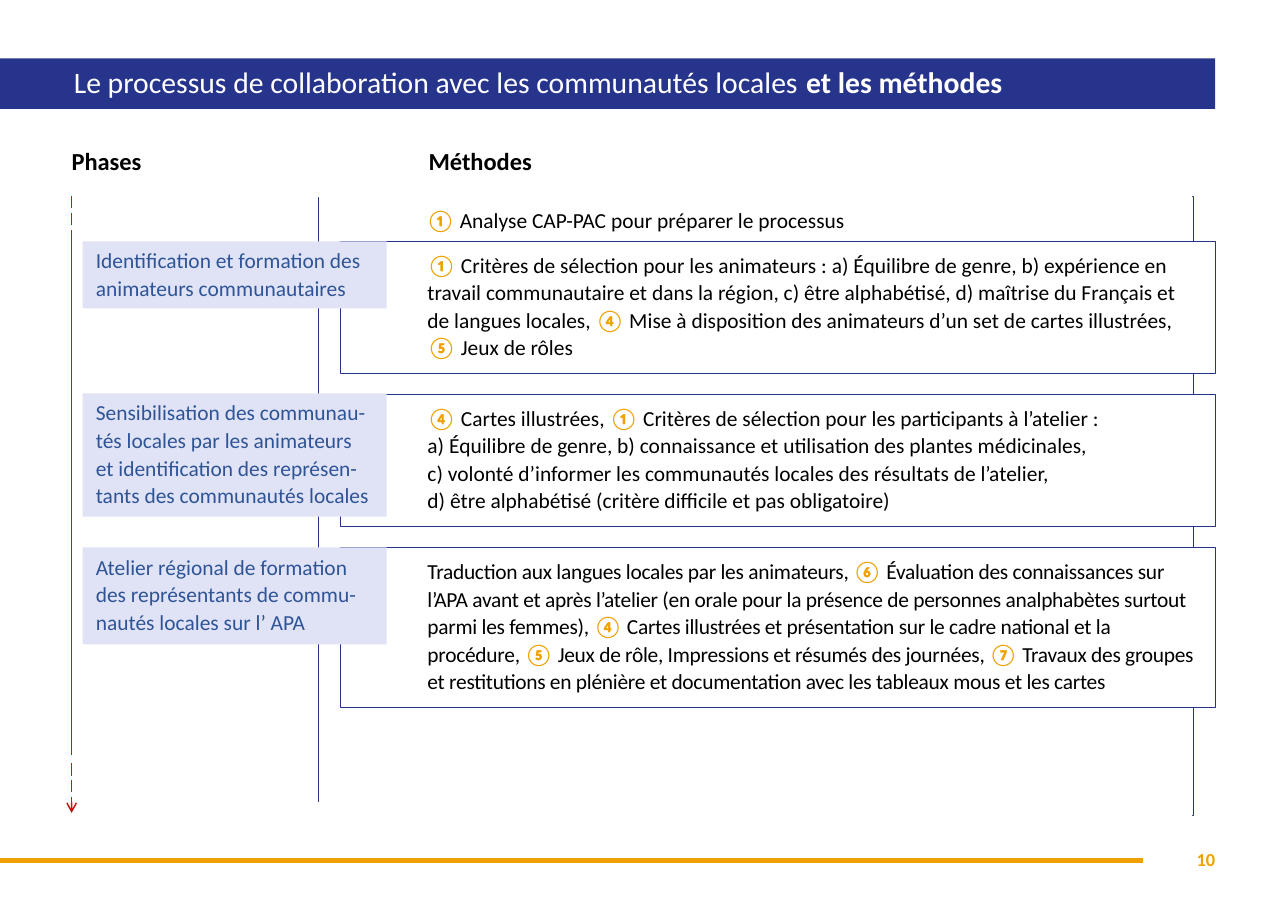
"""Build the slide on the collaboration process with local communities and its methods."""
from lxml import etree
from pptx import Presentation
from pptx.dml.color import RGBColor
from pptx.enum import dml, shapes, text
from pptx.oxml.ns import qn
from pptx.util import Inches, Pt

COLORS = {"navy": "27348B", "gold": "EEA100", "red": "CD1316", "pale": "E0E3F6",
          "label": "2F5496", "black": "000000", "white": "FFFFFF"}
FONT = "Calibri"
MARKERS = "①④⑤⑥⑦"

TITLE = [("Le processus de collaboration avec les communautés locales ", False),
         ("et les méthodes", True)]
HEADINGS = ["Phases", "Méthodes"]
PREPARATION = ["① ", "Analyse CAP-PAC pour préparer le processus"]
PAGE_NUMBER = "10"
PHASES = [
    {"label": "Identification et formation des animateurs communautaires",
     "label_top": 2.19, "label_height": 0.61, "top": 2.19, "height": 1.2, "spacing": 0,
     "methods": [
         "① ", "Critères de sélection pour les animateurs : a) Équilibre de genre, "
         "b) expérience en travail communautaire et dans la région, c) être alphabétisé, "
         "d) maîtrise du Français et de langues locales, ",
         "④", " Mise à disposition des animateurs d’un set de cartes illustrées, ",
         "⑤", " Jeux de rôles"]},
    {"label": "Sensibilisation des communau-tés locales par les animateurs "
              "et identification des représen-tants des communautés locales",
     "label_top": 3.57, "label_height": 1.12, "top": 3.58, "height": 1.2, "spacing": 0,
     "methods": [
         "④", " Cartes illustrées, ",
         "①", " Critères de sélection pour les participants à l’atelier : \n"
         "a) Équilibre de genre, b) connaissance et utilisation des plantes médicinales, \n"
         "c) volonté d’informer les communautés locales des résultats de l’atelier, \n"
         "d) être alphabétisé (critère difficile et pas obligatoire)"]},
    {"label": "Atelier régional de formation des représentants de commu-nautés locales "
              "sur l’ APA",
     "label_top": 4.97, "label_height": 0.88, "top": 4.97, "height": 1.45, "spacing": -0.2,
     "methods": [
         "Traduction aux langues locales par les animateurs, ",
         "⑥ ", "Évaluation des connaissances sur l’APA avant et après l’atelier (en orale "
         "pour la présence de personnes analphabètes surtout parmi les femmes), ",
         "④ ", "Cartes illustrées et présentation sur le cadre national et la procédure, ",
         "⑤", " Jeux de rôle, Impressions et résumés des journées, ",
         "⑦ ", "Travaux des groupes \net restitutions en plénière et documentation "
         "avec les tableaux mous et les cartes"]},
]
TIMELINE_X = 0.65
TIMELINE = [(1.78, 2.05, True, False), (2.09, 6.85, False, False), (6.93, 7.38, True, True)]


def color(name):
    return RGBColor.from_string(COLORS[name])


def place(shape, left, top, width, height):
    shape.left, shape.top = Inches(left), Inches(top)
    shape.width, shape.height = Inches(width), Inches(height)


def set_frame(shape, insets, anchor=text.MSO_ANCHOR.TOP):
    frame = shape.text_frame
    frame.auto_size = text.MSO_AUTO_SIZE.NONE
    frame.word_wrap = True
    frame.vertical_anchor = anchor
    (frame.margin_left, frame.margin_top,
     frame.margin_right, frame.margin_bottom) = map(Inches, insets)
    paragraph = frame.paragraphs[0]
    paragraph.alignment = text.PP_ALIGN.LEFT
    paragraph.space_before = Pt(0)
    return paragraph


def add_run(paragraph, content, size, color_name, bold=False, spacing=0):
    for index, line in enumerate(content.split("\n")):
        if index:
            paragraph.add_line_break()
        run = paragraph.add_run()
        run.text = line
        run.font.name, run.font.size, run.font.bold = FONT, Pt(size), bold
        run.font.color.rgb = color(color_name)
        if spacing:
            run._r.get_or_add_rPr().set("spc", str(round(spacing * 100)))


def add_methods(shape, runs, insets, spacing=0):
    paragraph = set_frame(shape, insets)
    paragraph.line_spacing, paragraph.space_after = Pt(18), Pt(6)
    for content in runs:
        marked = content[0] in MARKERS
        add_run(paragraph, content, 14, "gold" if marked else "black", marked, spacing)


def add_box(slide, left, top, width, height, fill, line_width=0):
    shape = slide.shapes.add_shape(shapes.MSO_SHAPE.RECTANGLE, 0, 0, 0, 0)
    place(shape, left, top, width, height)
    shape.shadow.inherit = False
    shape.fill.solid()
    shape.fill.fore_color.rgb = color(fill)
    if line_width:
        shape.line.color.rgb = color("navy")
        shape.line.width = Pt(line_width)
    else:
        shape.line.fill.background()
    return shape


def add_line(slide, start, end, color_name, width, dashed=False, arrow=False):
    line = slide.shapes.add_connector(shapes.MSO_CONNECTOR.STRAIGHT,
                                      *map(Inches, start + end))
    line.line.color.rgb = color(color_name)
    line.line.width = Pt(width)
    if dashed:
        line.line.dash_style = dml.MSO_LINE.LONG_DASH
    if arrow:
        etree.SubElement(line.line._get_or_add_ln(), qn("a:tailEnd"), type="arrow")
    etree.SubElement(line._element.spPr, qn("a:effectLst"))


def add_heading(shape, content):
    paragraph = set_frame(shape, (0, 0, 0, 0))
    properties = paragraph._p.get_or_add_pPr()
    properties.set("marL", "0")
    properties.set("indent", "0")
    etree.SubElement(properties, qn("a:buNone"))
    paragraph.line_spacing = 0.9
    add_run(paragraph, content, 16, "black", True)


def main():
    presentation = Presentation()
    presentation.slide_width, presentation.slide_height = Inches(11.69), Inches(8.27)
    slide = presentation.slides.add_slide(presentation.slide_layouts[1])

    title, phases_heading = slide.placeholders
    place(title, 0, 0.53, 11.03, 0.46)
    title.fill.solid()
    title.fill.fore_color.rgb = color("navy")
    paragraph = set_frame(title, (0.67, 0.04, 0.39, 0.04), text.MSO_ANCHOR.MIDDLE)
    paragraph.line_spacing = 0.9
    for content, bold in TITLE:
        add_run(paragraph, content, 19.4, "white", bold)

    frame = add_box(slide, 2.89, 1.78, 7.94, 5.62, "white", 0.5)
    add_methods(frame, PREPARATION, (0.98, 0.08, 0.08, 0.08))
    for top in (1.59, 7.28):
        add_box(slide, 2.5, top, 8.32, 0.2, "white")

    place(phases_heading, 0.65, 1.36, 3, 0.24)
    methods_heading = slide.shapes.add_textbox(0, 0, 0, 0)
    place(methods_heading, 3.89, 1.36, 3.78, 0.32)
    for shape, content in zip((phases_heading, methods_heading), HEADINGS):
        add_heading(shape, content)

    for phase in PHASES:
        box = add_box(slide, 3.09, phase["top"], 7.94, phase["height"], "white", 0.75)
        add_methods(box, phase["methods"], (0.79, 0.08, 0.12, 0.12), phase["spacing"])
        label = add_box(slide, 0.75, phase["label_top"], 2.76, phase["label_height"], "pale")
        paragraph = set_frame(label, (0.12, 0.04, 0.12, 0.08))
        paragraph.line_spacing = Pt(18)
        add_run(paragraph, phase["label"], 14, "label")

    for top, bottom, dashed, arrow in TIMELINE:
        add_line(slide, (TIMELINE_X, top), (TIMELINE_X, bottom), "red", 1, dashed, arrow)

    add_line(slide, (0, 7.81), (10.37, 7.81), "gold", 3)
    number = slide.shapes.add_textbox(0, 0, 0, 0)
    place(number, 10.29, 7.7, 0.74, 0.2)
    paragraph = set_frame(number, (0, 0, 0, 0))
    paragraph.alignment = text.PP_ALIGN.RIGHT
    add_run(paragraph, PAGE_NUMBER, 12, "gold", True)

    presentation.save("out.pptx")


if __name__ == "__main__":
    main()
